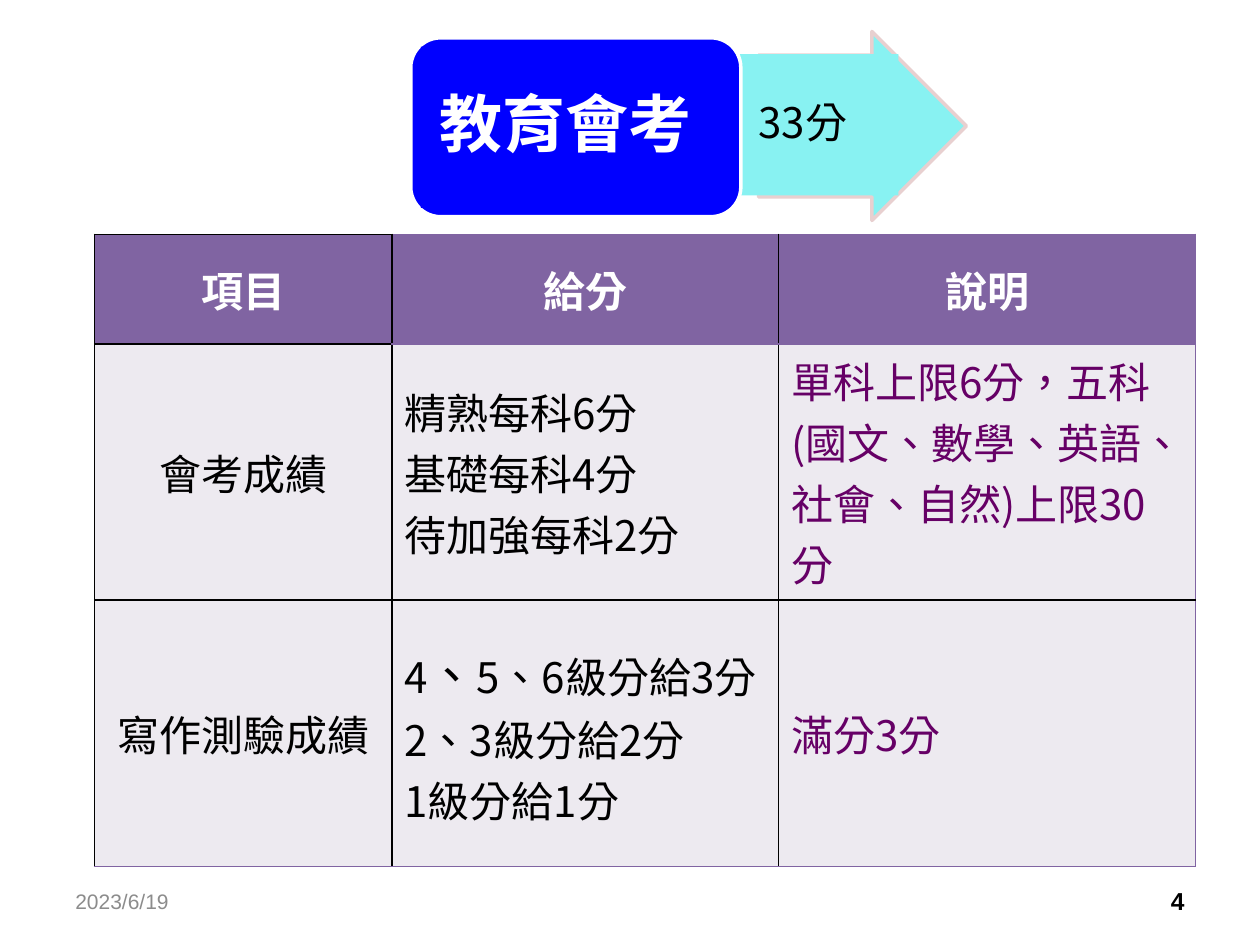
from lxml.etree import SubElement
from pptx import Presentation
from pptx.dml.color import RGBColor
from pptx.enum.shapes import MSO_SHAPE as Shape
from pptx.enum.text import MSO_ANCHOR as Anchor, PP_ALIGN as Align
from pptx.oxml.ns import qn
from pptx.util import Inches, Pt

BLACK = RGBColor(0, 0, 0)
WHITE = RGBColor(255, 255, 255)
BLUE = RGBColor(0, 0, 255)
CYAN = RGBColor(0x88, 0xF2, 0xF2)
PINK = RGBColor(0xE8, 0xD0, 0xD0)
PURPLE = RGBColor(0x80, 0x64, 0xA2)
PALE = RGBColor(0xED, 0xEA, 0xF0)
PLUM = RGBColor(0x66, 0, 0x66)
GRAY = RGBColor(0x8C, 0x8C, 0x8C)
CJK, LATIN, COMMA_FONT = "Noto Sans CJK SC", "Arial", "Calibri"

# Content: each cell is a list of paragraphs; a paragraph is a list of (text, size, font)
def plain(*lines):
    return [[(line, 24, CJK)] for line in lines]


ROWS = [
    [plain("項目"), plain("給分"), plain("說明")],
    [plain("會考成績"),
     plain("精熟每科6分", "基礎每科4分", "待加強每科2分"),
     plain("單科上限6分，五科(國文、數學、英語、社會、自然)上限30分")],
    [plain("寫作測驗成績"),
     [[("4", 24, CJK), ("、", 28, COMMA_FONT), ("5、6級分給3分", 24, CJK)]]
     + plain("2、3級分給2分", "1級分給1分"),
     plain("滿分3分")],
]
COLUMN_WIDTHS = [2.36, 3.07, 3.31]
ROW_HEIGHTS = [0.87, 1.88, 1.51]
TABLE_LEFT, TABLE_TOP = 0.75, 1.86

deck = Presentation()
deck.slide_width, deck.slide_height = Inches(10), Inches(7.5)
page = deck.slides.add_slide(deck.slide_layouts[6])


def write(frame, paragraphs, color, bold=False, align=Align.LEFT, spacing=None):
    for index, parts in enumerate(paragraphs):
        para = frame.paragraphs[0] if index == 0 else frame.add_paragraph()
        para.alignment = align
        if spacing:
            para.line_spacing = spacing
        for text, size, name in parts:
            span = para.add_run()
            span.text = text
            span.font.size, span.font.bold, span.font.name = Pt(size), bold, name
            span.font.color.rgb = color
            properties = span.font._element
            properties.set("lang", "zh-TW")
            SubElement(properties, qn("a:ea"), typeface=CJK)


def add_shape(kind, place, fill, line=None):
    shape = page.shapes.add_shape(kind, *map(Inches, place))
    shape.shadow.inherit = False
    shape.fill.solid()
    shape.fill.fore_color.rgb = fill
    if line is None:
        shape.line.fill.background()
    else:
        shape.line.color.rgb, shape.line.width = line, Pt(2)
    return shape


def set_frame(frame, side, edge):
    frame.word_wrap, frame.vertical_anchor = True, Anchor.MIDDLE
    frame.margin_left = frame.margin_right = Inches(side)
    frame.margin_top = frame.margin_bottom = Inches(edge)
    return frame


def set_borders(cell, row, column):
    last_row, last_column = row == len(ROWS) - 1, column == len(COLUMN_WIDTHS) - 1
    inner = column > 0
    purple = {"L": False, "R": last_column, "T": inner and row < 2,
              "B": last_row or (inner and row == 0)}
    for side, is_purple in purple.items():
        line = SubElement(cell._tc.get_or_add_tcPr(), qn(f"a:ln{side}"), w=str(Pt(1)))
        fill = SubElement(line, qn("a:solidFill"))
        SubElement(fill, qn("a:srgbClr"), val=str(PURPLE if is_purple else BLACK))


# Score arrow behind the exam title
arrow = add_shape(Shape.RIGHT_ARROW, (6.02, 0.25, 1.65, 1.5), CYAN, PINK)
arrow.adjustments[0], arrow.adjustments[1] = 0.75, 0.5
score = add_shape(Shape.RECTANGLE, (5.87, 0.43, 1.26, 1.12), CYAN)
frame = set_frame(score.text_frame, 0.02, 0.02)
frame.margin_left = Inches(0.15)
write(frame, plain("33分"), BLACK, spacing=0.9)

# Exam title
add_shape(Shape.ROUNDED_RECTANGLE, (3.26, 0.3, 2.62, 1.42), BLUE, WHITE)
title = add_shape(Shape.RECTANGLE, (3.34, 0.37, 2.45, 1.28), BLUE)
write(set_frame(title.text_frame, 0.15, 0.07), [[("教育會考", 36, CJK)]],
      WHITE, bold=True, spacing=0.9)

# Scoring table
table = page.shapes.add_table(
    len(ROWS), len(COLUMN_WIDTHS), Inches(TABLE_LEFT), Inches(TABLE_TOP),
    Inches(sum(COLUMN_WIDTHS)), Inches(sum(ROW_HEIGHTS))).table
for column, width in enumerate(COLUMN_WIDTHS):
    table.columns[column].width = Inches(width)
for row, cells in enumerate(ROWS):
    table.rows[row].height = Inches(ROW_HEIGHTS[row])
    header = row == 0
    for column, paragraphs in enumerate(cells):
        cell = table.cell(row, column)
        cell.vertical_anchor = Anchor.MIDDLE
        set_borders(cell, row, column)
        cell.fill.solid()
        cell.fill.fore_color.rgb = PURPLE if header else PALE
        color = WHITE if header else PLUM if column == 2 else BLACK
        align = Align.CENTER if header or column == 0 else Align.LEFT
        write(cell.text_frame, paragraphs, color, header, align)

# Footer: date and page number
for left, text, size, color, bold, align in [
        (0.5, "2023/6/19", 12, GRAY, False, Align.LEFT),
        (7.17, "4", 14, BLACK, True, Align.RIGHT)]:
    box = page.shapes.add_textbox(*map(Inches, (left, 6.95, 2.33, 0.4)))
    write(set_frame(box.text_frame, 0.1, 0.05), [[(text, size, LATIN)]], color, bold, align)

deck.save("out.pptx")
